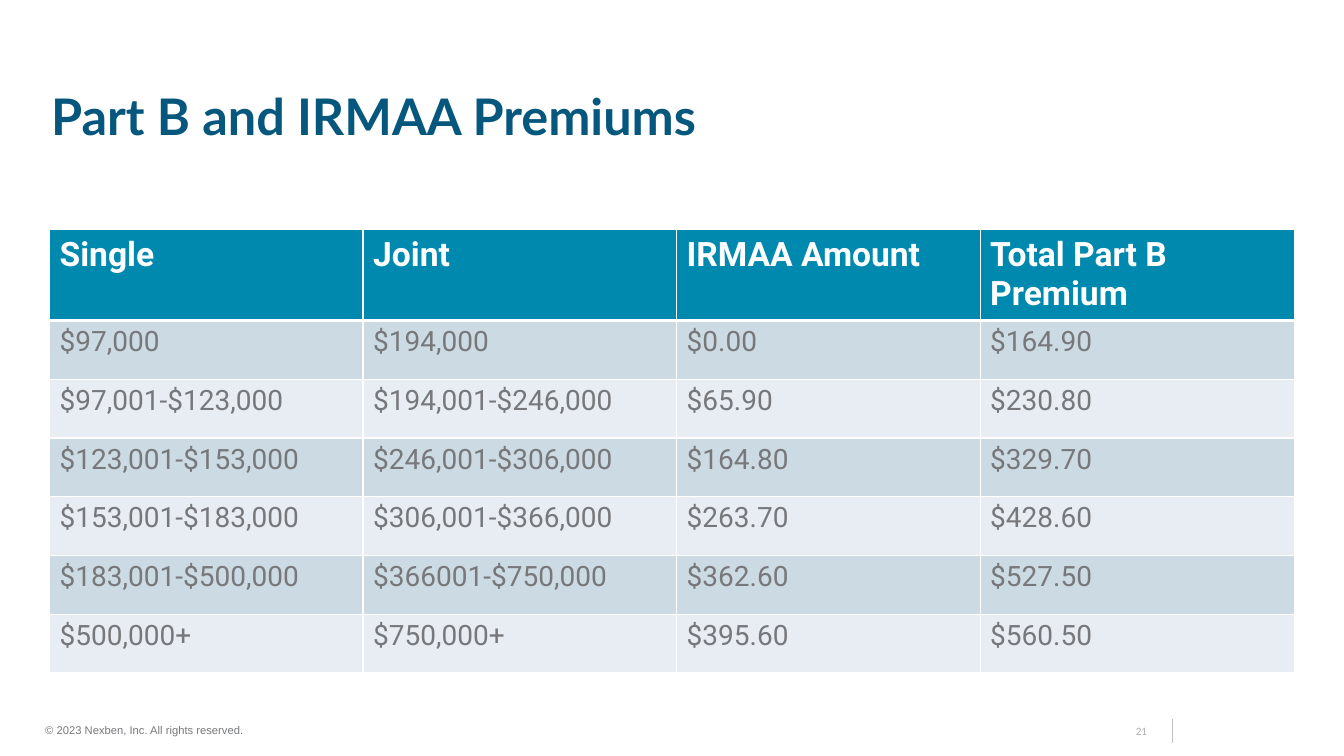
from lxml.etree import SubElement
from pptx import Presentation
from pptx.dml.color import RGBColor
from pptx.enum.shapes import MSO_CONNECTOR as Connector
from pptx.enum.text import MSO_ANCHOR as Anchor, PP_ALIGN as Align
from pptx.oxml.ns import qn
from pptx.util import Cm, Pt

WHITE = RGBColor(0xFF, 0xFF, 0xFF)
NAVY = RGBColor(0x05, 0x57, 0x7D)
TEAL = RGBColor(0x00, 0x89, 0xAE)
GRAY = RGBColor(0x77, 0x78, 0x7B)
PALE_GRAY = RGBColor(0xAD, 0xAE, 0xB0)
RULE_GRAY = RGBColor(0xBF, 0xBF, 0xBF)
BANDS = (RGBColor(0xCC, 0xDA, 0xE3), RGBColor(0xE7, 0xED, 0xF2))

COLUMN_WIDTHS = (7.9, 7.9, 7.65, 7.92)
HEADER_HEIGHT = 2.24
ROW_HEIGHT = 1.48
PREMIUMS = (
    ("Single", "Joint", "IRMAA Amount", "Total Part B Premium"),
    ("$97,000", "$194,000", "$0.00", "$164.90"),
    ("$97,001-$123,000", "$194,001-$246,000", "$65.90", "$230.80"),
    ("$123,001-$153,000", "$246,001-$306,000", "$164.80", "$329.70"),
    ("$153,001-$183,000", "$306,001-$366,000", "$263.70", "$428.60"),
    ("$183,001-$500,000", "$366001-$750,000", "$362.60", "$527.50"),
    ("$500,000+", "$750,000+", "$395.60", "$560.50"),
)


class PremiumSlide:
    def __init__(self, deck):
        self.page = deck.slides.add_slide(deck.slide_layouts[6])

    def add_span(self, para, text, font, size, color, bold=False):
        span = para.add_run()
        span.text = text
        span.font.name = font
        span.font.size = Pt(size)
        span.font.bold = bold
        span.font.color.rgb = color

    def add_text(self, left, top, width, height, text, font, size, color,
                 bold=False, align=Align.LEFT, spacing=1.0):
        box = self.page.shapes.add_textbox(Cm(left), Cm(top), Cm(width), Cm(height))
        frame = box.text_frame
        frame.word_wrap = True
        frame.vertical_anchor = Anchor.BOTTOM
        para = frame.paragraphs[0]
        para.alignment = align
        para.line_spacing = spacing
        self.add_span(para, text, font, size, color, bold)

    def add_rule(self, x, top, bottom, color, width):
        rule = self.page.shapes.add_connector(
            Connector.STRAIGHT, Cm(x), Cm(bottom), Cm(x), Cm(top))
        rule.line.color.rgb = color
        rule.line.width = Pt(width)
        SubElement(rule._element.spPr, qn("a:effectLst"))

    def add_borders(self, cell, top, bottom):
        properties = cell._tc.get_or_add_tcPr()
        for side, width in (("L", 1), ("R", 1), ("T", top), ("B", bottom)):
            edge = SubElement(properties, qn(f"a:ln{side}"), w=str(Pt(width)))
            fill = SubElement(edge, qn("a:solidFill"))
            SubElement(fill, qn("a:srgbClr"), val=str(WHITE))

    def add_premium_table(self, left, top, widths, rows):
        height = HEADER_HEIGHT + ROW_HEIGHT * (len(rows) - 1)
        table = self.page.shapes.add_table(
            len(rows), len(widths), Cm(left), Cm(top),
            Cm(sum(widths)), Cm(height)).table
        for column, width in zip(table.columns, widths):
            column.width = Cm(width)
        for index, values in enumerate(rows):
            header = index == 0
            table.rows[index].height = Cm(HEADER_HEIGHT if header else ROW_HEIGHT)
            for cell, value in zip(table.rows[index].cells, values):
                self.add_borders(cell, 3 if index == 1 else 1, 3 if header else 1)
                cell.fill.solid()
                cell.fill.fore_color.rgb = TEAL if header else BANDS[(index - 1) % 2]
                self.add_span(cell.text_frame.paragraphs[0], value, "Roboto",
                              24 if header else 20, WHITE if header else GRAY, header)


def main():
    deck = Presentation()
    deck.slide_width = Cm(33.87)
    deck.slide_height = Cm(19.05)
    slide = PremiumSlide(deck)
    slide.add_rule(29.54, 18.11, 18.72, RULE_GRAY, 0.5)
    slide.add_text(0.89, 18.08, 5.74, 0.61, "© 2023 Nexben, Inc. All rights reserved.",
                   "Arial", 8, GRAY)
    slide.add_text(1.04, 0.76, 31.75, 3.05, "Part B and IRMAA Premiums",
                   "Lato", 36, NAVY, bold=True, spacing=0.9)
    slide.add_text(27.86, 18.11, 1.3, 0.61, "21", "Calibri", 8, PALE_GRAY,
                   align=Align.RIGHT)
    slide.add_premium_table(1.25, 5.79, COLUMN_WIDTHS, PREMIUMS)
    deck.save("out.pptx")


if __name__ == "__main__":
    main()
